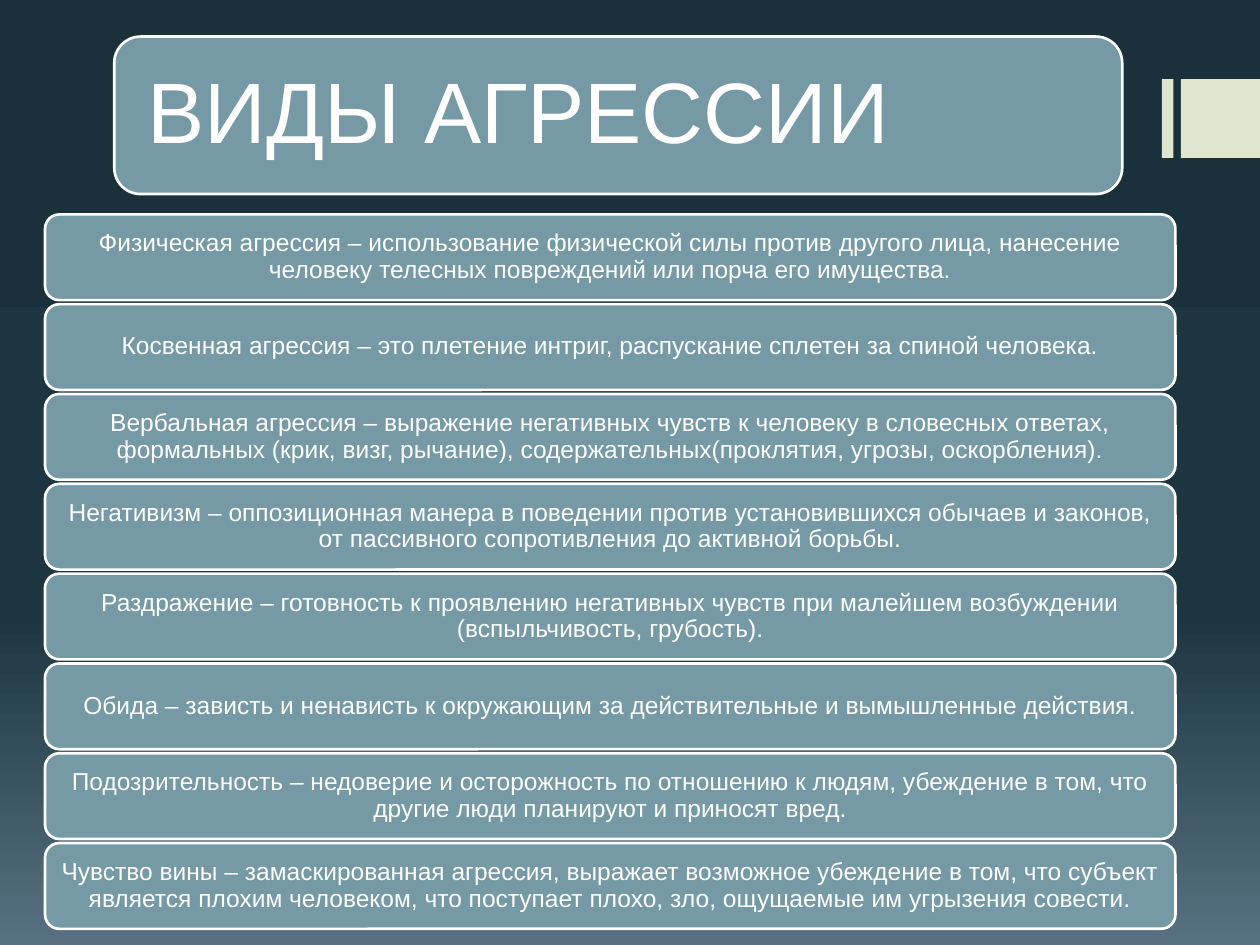
from copy import deepcopy
from dataclasses import dataclass

from pptx import Presentation
from pptx.dml.color import RGBColor
from pptx.enum import shapes, text
from pptx.oxml.ns import qn
from pptx.util import Pt

WHITE = RGBColor(0xFF, 0xFF, 0xFF)
PANEL = RGBColor(0x75, 0x9A, 0xA5)
ACCENT = RGBColor(0xDF, 0xE6, 0xD0)
BACKGROUND = [
    (0, RGBColor(0x1A, 0x31, 0x3B)),
    (0.65, RGBColor(0x1C, 0x35, 0x40)),
    (1, RGBColor(0x58, 0x71, 0x82)),
]
FONT = "Arial"

TITLE = "ВИДЫ АГРЕССИИ"
KINDS = [
    "Физическая агрессия – использование физической силы против другого лица, "
    "нанесение человеку телесных повреждений или порча его имущества.",
    "Косвенная агрессия – это плетение интриг, распускание сплетен за спиной человека.",
    "Вербальная агрессия – выражение негативных чувств к человеку в словесных ответах, "
    "формальных (крик, визг, рычание), содержательных(проклятия, угрозы, оскорбления).",
    "Негативизм – оппозиционная манера в поведении против установившихся обычаев "
    "и законов, от пассивного сопротивления до активной борьбы.",
    "Раздражение – готовность к проявлению негативных чувств при малейшем возбуждении "
    "(вспыльчивость, грубость).",
    "Обида – зависть и ненависть к окружающим за действительные и вымышленные действия.",
    "Подозрительность – недоверие и осторожность по отношению к людям, убеждение в том, "
    "что другие люди планируют и приносят вред.",
    "Чувство вины – замаскированная агрессия, выражает возможное убеждение в том, "
    "что субъект является плохим человеком, что поступает плохо, зло, ощущаемые им "
    "угрызения совести.",
]


@dataclass
class Box:
    """Position and size in points."""
    left: float
    top: float
    width: float
    height: float

    def emu(self):
        return Pt(self.left), Pt(self.top), Pt(self.width), Pt(self.height)


ACCENTS = [Box(664, 45.2, 6.6, 45), Box(674.8, 45.2, 45.2, 45)]
TITLE_PANEL = Box(65.3, 20.9, 576, 90)
TITLE_TEXT = Box(69.7, 25.3, 567.2, 81.2)
FIRST_CARD = Box(25.7, 122.5, 646, 49)
CARD_PITCH = 51.32


def paint_background(s) -> None:
    fill = s.background.fill
    fill.gradient()
    fill.gradient_angle = 270
    stops = s.element.find(".//" + qn("a:gsLst"))
    stops.append(deepcopy(stops[-1]))
    for stop, (position, color) in zip(fill.gradient_stops, BACKGROUND):
        stop.position = position
        stop.color.rgb = color


def add_accent(s, box: Box) -> None:
    sp = s.shapes.add_shape(shapes.MSO_SHAPE.RECTANGLE, *box.emu())
    sp.shadow.inherit = False
    sp.fill.solid()
    sp.fill.fore_color.rgb = ACCENT
    sp.line.fill.background()


def add_panel(s, box: Box):
    sp = s.shapes.add_shape(shapes.MSO_SHAPE.ROUNDED_RECTANGLE, *box.emu())
    sp.shadow.inherit = False
    sp.fill.solid()
    sp.fill.fore_color.rgb = PANEL
    sp.line.color.rgb = WHITE
    sp.line.width = Pt(1.5)
    return sp


def write(sp, words: str, size: float, align, inset_x: float, inset_y: float) -> None:
    tf = sp.text_frame
    tf.text = words
    tf.word_wrap = True
    tf.auto_size = text.MSO_AUTO_SIZE.NONE
    tf.vertical_anchor = text.MSO_ANCHOR.MIDDLE
    tf.margin_left = tf.margin_right = Pt(inset_x)
    tf.margin_top = tf.margin_bottom = Pt(inset_y)
    p = tf.paragraphs[0]
    p.alignment = align
    p.line_spacing = 0.9
    font = p.runs[0].font
    font.name, font.size, font.color.rgb = FONT, Pt(size), WHITE


def add_title(s) -> None:
    add_panel(s, TITLE_PANEL)
    title = s.shapes.title
    title.left, title.top, title.width, title.height = TITLE_TEXT.emu()
    write(title, TITLE, 49, text.PP_ALIGN.LEFT, 14.7, 14.7)
    # Bring the title in front of its panel
    title.element.getparent().append(title.element)


def main() -> None:
    prs = Presentation()
    prs.slide_width, prs.slide_height = Pt(720), Pt(540)
    s = prs.slides.add_slide(prs.slide_layouts[5])
    paint_background(s)
    for box in ACCENTS:
        add_accent(s, box)
    add_title(s)
    for i, kind in enumerate(KINDS):
        box = Box(FIRST_CARD.left, FIRST_CARD.top + i * CARD_PITCH,
                  FIRST_CARD.width, FIRST_CARD.height)
        write(add_panel(s, box), kind, 14, text.PP_ALIGN.CENTER, 4.2, 2.1)
    prs.save("out.pptx")


if __name__ == "__main__":
    main()
